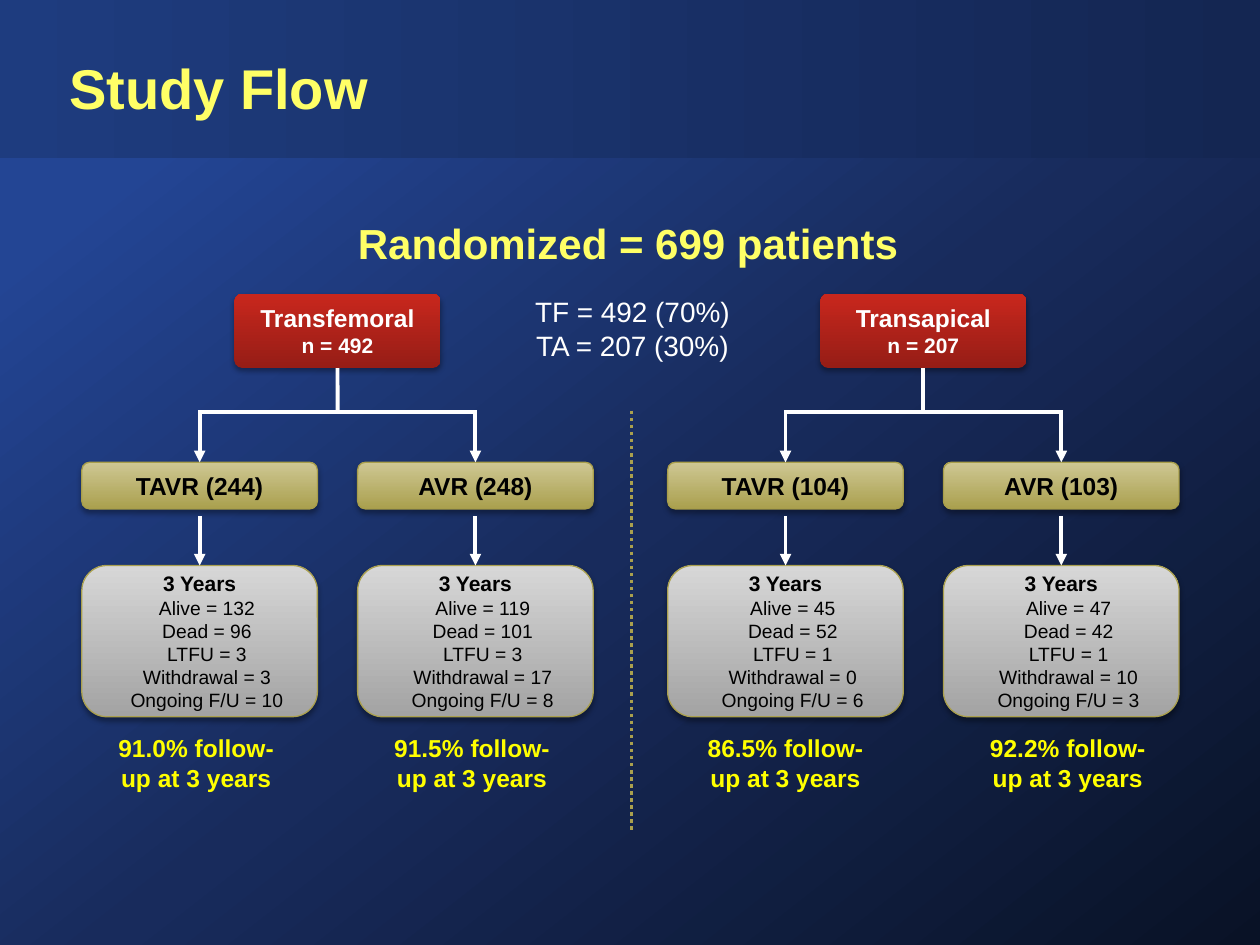
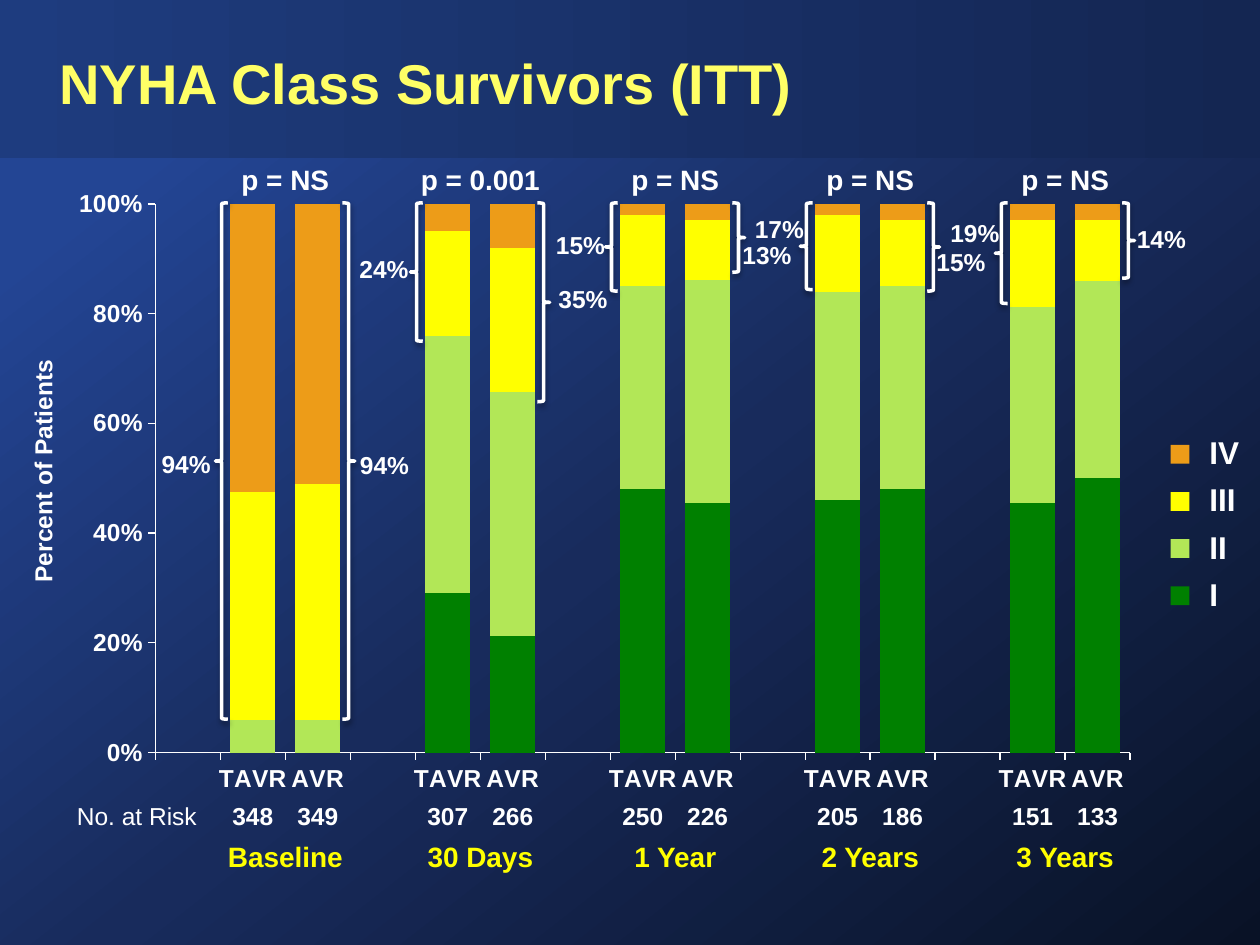
"""Build the study flow slide and the NYHA class slide."""
import copy

import lxml.etree
import pptx
import pptx.chart.data
import pptx.dml.color
import pptx.enum.chart
import pptx.enum.dml
import pptx.enum.shapes
import pptx.enum.text
import pptx.oxml
import pptx.oxml.ns
import pptx.util

Cm = pptx.util.Cm
Pt = pptx.util.Pt
qn = pptx.oxml.ns.qn
SHAPE = pptx.enum.shapes.MSO_SHAPE
ALIGN = pptx.enum.text.PP_ALIGN
ANCHOR = pptx.enum.text.MSO_ANCHOR

FONT = "Arial"
WHITE, BLACK, LEMON, YELLOW = "FFFFFF", "000000", "FFFF66", "FFFF00"
OLIVE = "AAA04E"
BACK = [(0.14, "234594"), (0.53, "182B5C"), (1, "091226")]
BAND = [(0, "1E3C7F"), (1, "142652")]
RED = [(0, "961D16"), (1, "C8271D")]
GOLD = [(0, OLIVE), (1, "CEC793")]
GREY = [(0, "A3A3A3"), (1, "D7D7D7")]

FATES = ["Alive", "Dead", "LTFU", "Withdrawal", "Ongoing F/U"]
ROUTES = [
    {"name": "Transfemoral", "count": 492, "left": 1.65, "arms": [
        ("TAVR (244)", [132, 96, 3, 3, 10], "91.0%", 0.36),
        ("AVR (248)", [119, 101, 3, 17, 8], "91.5%", 0.36)]},
    {"name": "Transapical", "count": 207, "left": 13.46, "arms": [
        ("TAVR (104)", [45, 52, 1, 0, 6], "86.5%", 0.43),
        ("AVR (103)", [47, 42, 1, 10, 3], "92.2%", 0.56)]},
]

CLASSES = [
    ("I", "008000", [(0, 0), (29, 21), (48, 46), (46, 48), (46, 50)]),
    ("II", "B2E757", [(6, 6), (47, 44), (37, 41), (38, 37), (36, 36)]),
    ("III", YELLOW, [(42, 43), (19, 26), (13, 11), (14, 12), (16, 11)]),
    ("IV", "ED9C18", [(53, 51), (5, 8), (2, 3), (2, 3), (3, 3)]),
]
# Each mark: share, brace height, label shift from the pair centre, label top
PERIODS = [
    ("Baseline", "p = NS", (348, 349),
     [("94%", 10.41, -2, 8.92), ("94%", 10.41, 2, 8.94)]),
    ("30 Days", "p = 0.001", (307, 266),
     [("24%", 2.79, -1.94, 5), ("35%", 4.01, 2.07, 5.61)]),
    ("1 Year", "p = NS", (250, 226),
     [("15%", 1.78, -1.91, 4.52), ("13%", 1.4, 1.85, 4.72)]),
    ("2 Years", "p = NS", (205, 186),
     [("17%", 1.75, -1.83, 4.19), ("15%", 1.78, 1.83, 4.85)]),
    ("3 Years", "p = NS", (151, 133),
     [("19%", 2.03, -1.82, 4.27), ("14%", 1.52, 1.94, 4.39)]),
]
CHART = (1.35, 2.92, 22.28, 13.54)
PLOT = {"x": 0.08, "y": 0.088, "w": 0.882, "h": 0.817}


def tint(code):
    return pptx.dml.color.RGBColor.from_string(code)


def box(*cms):
    return [Cm(length) for length in cms]


def style(font, size, color, bold):
    font.name, font.size, font.bold = FONT, Pt(size), bold
    font.color.rgb = tint(color)


def write(shape, text, size, color=WHITE, bold=True, align=ALIGN.CENTER,
          anchor=ANCHOR.MIDDLE, wrap=True):
    frame = shape.text_frame
    frame.text = text
    frame.word_wrap = wrap
    frame.vertical_anchor = anchor
    for para in frame.paragraphs:
        para.alignment = align
        for run in para.runs:
            style(run.font, size, color, bold)
    return frame


def label(slide, place, text, size, **look):
    item = slide.shapes.add_textbox(*box(*place))
    write(item, text, size, **{"anchor": ANCHOR.TOP, **look})
    return item


def shade(shape, stops, angle=270):
    shape.fill.gradient()
    shape.fill.gradient_angle = 360 - angle
    chain = shape.element.spPr.find(".//" + qn("a:gsLst"))
    while len(chain) < len(stops):
        chain.append(copy.deepcopy(chain[0]))
    for stop, (spot, color) in zip(shape.fill.gradient_stops, stops):
        stop.position = spot
        stop.color.rgb = tint(color)


def cast(shape, alpha=35):
    """Give the shape a soft shadow below it."""
    glow = shape.element.spPr.find(qn("a:effectLst"))
    drop = lxml.etree.SubElement(glow, qn("a:outerShdw"), blurRad="40000",
                                 dist="23000", dir="5400000", rotWithShape="0")
    hue = lxml.etree.SubElement(drop, qn("a:srgbClr"), val=BLACK)
    lxml.etree.SubElement(hue, qn("a:alpha"), val=str(alpha * 1000))


def draw(slide, kind, place, stops=None, line=None, weight=0.75, angle=270):
    shape = slide.shapes.add_shape(kind, *box(*place))
    shape.shadow.inherit = False
    if stops:
        shade(shape, stops, angle)
    else:
        shape.fill.background()
    if line:
        shape.line.color.rgb = tint(line)
        shape.line.width = Pt(weight)
    else:
        shape.line.fill.background()
    return shape


def link(slide, start, end, color=WHITE, weight=2.25, head=False):
    kind = pptx.enum.shapes.MSO_CONNECTOR.STRAIGHT
    wire = slide.shapes.add_connector(kind, *box(*start, *end))
    wire.line.color.rgb = tint(color)
    wire.line.width = Pt(weight)
    if head:
        lxml.etree.SubElement(wire.line._get_or_add_ln(), qn("a:tailEnd"),
                              type="triangle")
    lxml.etree.SubElement(wire.element.spPr, qn("a:effectLst"))
    return wire


def dress(deck, slide):
    """Move the backdrop and the title band to the slide master."""
    parts = [((0, 0, 25.4, 19.05), BACK, 52), ((0, 0, 25.4, 3.18), BAND, 0)]
    for spot, (place, stops, angle) in enumerate(parts):
        part = draw(slide, SHAPE.RECTANGLE, place, stops, angle=angle).element
        part.nvSpPr.cNvPr.set("id", str(101 + spot))
        deck.slide_master.shapes.element.insert(2 + spot, part)


def start(deck, text, place):
    slide = deck.slides.add_slide(deck.slide_layouts[5])
    title = slide.shapes.title
    title.left, title.top, title.width, title.height = box(*place)
    frame = write(title, text, 32, LEMON, align=ALIGN.LEFT)
    frame.auto_size = pptx.enum.text.MSO_AUTO_SIZE.NONE
    frame.paragraphs[0].line_spacing = Pt(30)
    return slide


def add_arm(slide, left, bus, arm):
    name, counts, rate, shift = arm
    wide = 4.75
    mid = left + wide / 2
    pill = draw(slide, SHAPE.ROUNDED_RECTANGLE, (left, 9.32, wide, 0.94),
                GOLD, "A89E4A")
    cast(pill)
    write(pill, name, 14, BLACK)
    card = draw(slide, SHAPE.ROUNDED_RECTANGLE, (left, 11.4, wide, 3.05),
                GREY, OLIVE)
    cast(card)
    lines = [f"{fate} = {count}" for fate, count in zip(FATES, counts)]
    frame = write(card, "\n".join(["3 Years"] + lines), 11, BLACK, False)
    style(frame.paragraphs[0].runs[0].font, 12, BLACK, True)
    for para in frame.paragraphs[1:]:
        para._p.get_or_add_pPr().set("marL", str(Cm(0.3)))
    for top, goal, low in [(bus, pill, 9.32), (10.41, card, 11.4)]:
        link(slide, (mid, top), (mid, low), head=True).end_connect(goal, 0)
    label(slide, (left + shift, 14.66, 3.89, 1.45),
          f"{rate} follow-up at 3 years", 14, color=YELLOW)
    return mid


def add_flow(slide):
    bus, step = 8.31, 5.56
    label(slide, (6.73, 4.27, 11.86, 1.42), "Randomized = 699 patients", 24,
          color=LEMON)
    label(slide, (8.94, 5.94, 7.62, 1.35), "TF = 492 (70%)\nTA = 207 (30%)",
          16, bold=False, anchor=ANCHOR.MIDDLE)
    split = link(slide, (12.73, 8.28), (12.73, 16.74), OLIVE, 2)
    split.line.dash_style = pptx.enum.dml.MSO_LINE.ROUND_DOT
    for route in ROUTES:
        mids = [add_arm(slide, route["left"] + spot * step, bus, arm)
                for spot, arm in enumerate(route["arms"])]
        mid = sum(mids) / 2
        root = draw(slide, SHAPE.ROUNDED_RECTANGLE,
                    (mid - 2.08, 5.92, 4.16, 1.5), RED)
        root.adjustments[0] = 0.11
        cast(root)
        frame = write(root, f"{route['name']}\vn = {route['count']}", 14)
        frame.paragraphs[0].runs[1].font.size = Pt(12)
        link(slide, (mid, 7.42), (mid, bus)).begin_connect(root, 2)
        link(slide, (mids[0] - 0.03, bus), (mids[1] + 0.03, bus))


def add_bars(slide):
    data = pptx.chart.data.CategoryChartData()
    data.categories = ["", "TAVR", "AVR"] * len(PERIODS)
    for name, _, pairs in CLASSES:
        data.add_series(name, [v for pair in pairs for v in (None, *pair)])
    kind = pptx.enum.chart.XL_CHART_TYPE.COLUMN_STACKED_100
    chart = slide.shapes.add_chart(kind, *box(*CHART), data).chart
    chart.has_legend = chart.has_title = False
    style(chart.font, 14, WHITE, True)
    plot = chart.plots[0]
    plot.gap_width, plot.overlap = 45, 100
    plot.vary_by_categories = False
    for series, (_, color, _) in zip(plot.series, CLASSES):
        series.format.fill.solid()
        series.format.fill.fore_color.rgb = tint(color)
    for axis in (chart.category_axis, chart.value_axis):
        axis.has_major_gridlines = False
        axis.major_tick_mark = pptx.enum.chart.XL_TICK_MARK.OUTSIDE
        axis.format.line.color.rgb = tint(WHITE)
        axis.format.line.width = Pt(0.75)
        style(axis.tick_labels.font, 14, WHITE, True)
    scale = chart.value_axis
    scale.minimum_scale, scale.maximum_scale, scale.major_unit = 0, 1, 0.2
    scale.tick_labels.number_format = "0%"
    scale.tick_labels.number_format_is_linked = False
    area = chart._chartSpace.find(".//" + qn("c:plotArea"))
    for old in area.findall(qn("c:layout")):
        area.remove(old)
    layout = lxml.etree.Element(qn("c:layout"))
    area.insert(0, layout)
    hand = lxml.etree.SubElement(layout, qn("c:manualLayout"))
    rules = {"layoutTarget": "inner", "xMode": "edge", "yMode": "edge", **PLOT}
    for key, value in rules.items():
        lxml.etree.SubElement(hand, qn("c:" + key), val=str(value))


def add_marks(slide):
    slot = CHART[2] * PLOT["w"] / (3 * len(PERIODS))
    edge = CHART[0] + CHART[2] * PLOT["x"]
    braces = [(SHAPE.LEFT_BRACE, -1.41), (SHAPE.RIGHT_BRACE, 1.15)]
    for spot, (period, chance, risks, marks) in enumerate(PERIODS):
        mid = edge + (3 * spot + 2) * slot
        label(slide, (mid - 1.69, 3.15, 3.38, 0.94), chance, 16)
        label(slide, (mid - 2.39, 16.79, 4.78, 0.94), period, 16, color=YELLOW)
        for side, risk in zip((-0.5, 0.5), risks):
            label(slide, (mid + side * slot - 0.95, 16.03, 1.9, 1.07),
                  str(risk), 14)
        for (kind, gap), (share, tall, shift, top) in zip(braces, marks):
            brace = draw(slide, kind, (mid + gap, 4.09, 0.25, tall),
                         line=WHITE, weight=2)
            cast(brace, 38)
            label(slide, (mid + shift - 0.95, top, 1.9, 0.86), share, 14)
    label(slide, (1.3, 16.03, 5.08, 0.86), "No. at Risk", 14, bold=False,
          align=ALIGN.LEFT)
    side = label(slide, (-1.63, 9.07, 5, 0.86), "Percent of Patients", 14,
                 wrap=False)
    side.rotation = 270


def add_key(slide):
    for spot, (name, color, _) in enumerate(reversed(CLASSES)):
        top = 8.97 + 0.95 * spot
        chip = draw(slide, SHAPE.RECTANGLE, (23.6, top, 0.38, 0.38))
        chip.fill.solid()
        chip.fill.fore_color.rgb = tint(color)
        label(slide, (24.13, top - 0.36, 1.27, 1.07), name, 18,
              align=ALIGN.LEFT, wrap=False)


def main():
    deck = pptx.Presentation()
    deck.slide_width, deck.slide_height = box(25.4, 19.05)
    flow = start(deck, "Study Flow", (1.14, 0.71, 18.14, 2.39))
    dress(deck, flow)
    add_flow(flow)
    nyha = start(deck, "NYHA Class Survivors (ITT)", (0.94, 0.48, 18.08, 2.64))
    add_bars(nyha)
    add_marks(nyha)
    add_key(nyha)
    deck.save("out.pptx")


if __name__ == "__main__":
    main()
